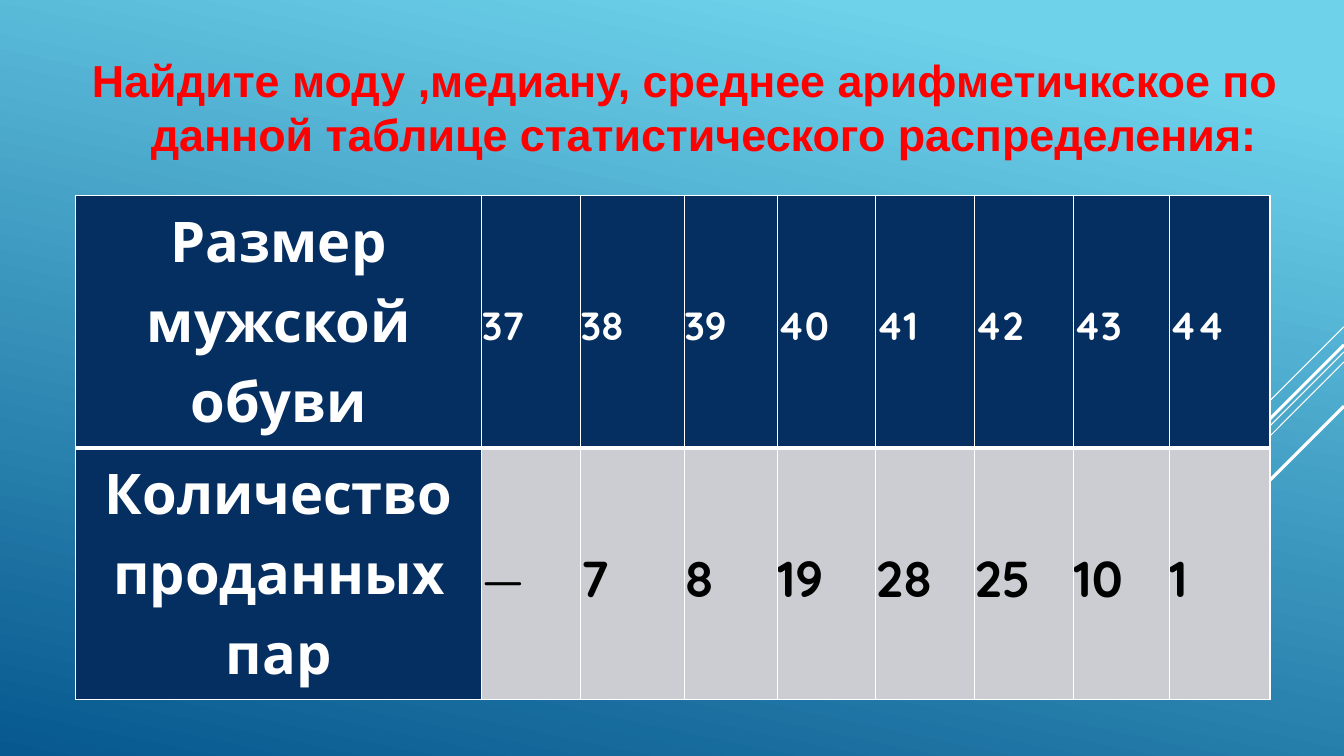
from dataclasses import dataclass

from lxml import etree
from pptx import Presentation
from pptx import util as u
from pptx.dml.color import RGBColor
from pptx.enum import shapes, text
from pptx.oxml.ns import qn

COLUMNS, ROWS = 160, 90  # square grid units over the whole slide


@dataclass(frozen=True)
class Theme:
    sky: str = "6ED2EB"
    deep: str = "06588E"
    white: str = "FFFFFF"
    black: str = "000000"
    red: str = "FF0000"
    navy: str = "052F61"
    grey: str = "CCCDD2"
    title_font: str = "Arial"
    table_font: str = "Quicksand"
    title_size: int = 32
    label_size: int = 40
    shoe_size: int = 28
    count_size: int = 36
    thin: float = 0.75
    thick: float = 2.25
    border: int = 1
    header_rule: int = 3


THEME = Theme()

# right-end row, reach to the lower left, line width
RAYS = [
    (38.9, 12, THEME.thin),
    (41.9, 39.1, THEME.thin),
    (43.1, 24.8, THEME.thin),
    (41.05, 22.9, THEME.thick),
    (48.35, 16.7, THEME.thick),
]
COLUMN_SPANS = [48.36, 11.76, 12.36, 11.04, 11.76, 11.76, 11.76, 11.4, 12]
ROW_SPAN = 30
SHOE_SIZES = ["Размер мужской обуви"] + [str(n) for n in range(37, 45)]
PAIRS_SOLD = ["Количество проданных пар", "—", "7", "8", "19", "28", "25", "10", "1"]


def grid(*spans):
    """Turn grid units into slide lengths."""
    return [u.Inches(span / 12) for span in spans]


def rgb(color):
    return RGBColor.from_string(color)


def add_run(p, content, font, size, color, bold=True):
    r = p.add_run()
    r.text = content
    r.font.name, r.font.size, r.font.bold = font, u.Pt(size), bold
    r.font.color.rgb = rgb(color)


def paint_background(s):
    fill = s.background.fill
    fill.gradient()
    fill.gradient_angle = 258
    for stop, color, position in zip(fill.gradient_stops, (THEME.sky, THEME.deep), (0.1, 1)):
        stop.color.rgb = rgb(color)
        stop.position = position


def add_ray(s, row, reach, width):
    """Draw a 45-degree line from the right edge down to the left."""
    ends = grid(COLUMNS, row, COLUMNS - reach, row + reach)
    ray = s.shapes.add_connector(shapes.MSO_CONNECTOR.STRAIGHT, *ends)
    ray.line.color.rgb = rgb(THEME.white)
    ray.line.width = u.Pt(width)
    etree.SubElement(ray._element.spPr, qn("a:effectLst"))


def set_title(s, content):
    sp = s.shapes.title
    sp.left, sp.top, sp.width, sp.height = grid(9.5, 5.64, 144.12, 14.16)
    tf = sp.text_frame
    tf.word_wrap = True
    tf.auto_size = text.MSO_AUTO_SIZE.NONE
    tf.vertical_anchor = text.MSO_ANCHOR.TOP
    p = tf.paragraphs[0]
    p.alignment = text.PP_ALIGN.CENTER
    indent = u.Inches(0.38)
    pPr = p._p.get_or_add_pPr()
    pPr.set("marL", str(indent))
    pPr.set("indent", str(-indent))
    add_run(p, content, THEME.title_font, THEME.title_size, THEME.red)


def set_borders(cell, bottom, top):
    tcPr = cell._tc.get_or_add_tcPr()
    widths = {"L": THEME.border, "R": THEME.border, "T": top, "B": bottom}
    for side, width in widths.items():
        ln = etree.SubElement(tcPr, qn(f"a:ln{side}"), w=str(u.Pt(width)))
        fill = etree.SubElement(ln, qn("a:solidFill"))
        etree.SubElement(fill, qn("a:srgbClr"), val=THEME.white)


def fill_cell(cell, content, size, color, fill, is_label):
    cell.margin_left = cell.margin_right = cell.margin_top = cell.margin_bottom = 0
    cell.fill.solid()
    cell.fill.fore_color.rgb = rgb(fill)
    p = cell.text_frame.paragraphs[0]
    p.line_spacing = 1.15
    if is_label:
        p.alignment = text.PP_ALIGN.CENTER
    else:
        cell.vertical_anchor = text.MSO_ANCHOR.MIDDLE
    add_run(p, content, THEME.table_font, size, color, bold=content != "—")


def add_sales_table(s):
    box = grid(9, 23.3, sum(COLUMN_SPANS), 2 * ROW_SPAN)
    table = s.shapes.add_table(2, len(COLUMN_SPANS), *box).table
    for column, width in zip(table.columns, grid(*COLUMN_SPANS)):
        column.width = width
    styles = [
        (SHOE_SIZES, THEME.shoe_size, THEME.white, THEME.navy),
        (PAIRS_SOLD, THEME.count_size, THEME.black, THEME.grey),
    ]
    for i, (values, size, color, fill) in enumerate(styles):
        table.rows[i].height = grid(ROW_SPAN)[0]
        for j, value in enumerate(values):
            cell = table.cell(i, j)
            if i == 0:
                set_borders(cell, bottom=THEME.header_rule, top=THEME.border)
            else:
                set_borders(cell, bottom=THEME.border, top=THEME.header_rule)
            if j == 0:
                fill_cell(cell, value, THEME.label_size, THEME.white, THEME.navy, True)
            else:
                fill_cell(cell, value, size, color, fill, False)


def main():
    prs = Presentation()
    prs.slide_width, prs.slide_height = grid(COLUMNS, ROWS)
    s = prs.slides.add_slide(prs.slide_layouts[5])
    paint_background(s)
    for ray in RAYS:
        add_ray(s, *ray)
    add_sales_table(s)
    set_title(s, "Найдите моду ,медиану, среднее арифметичкское по "
                 "данной таблице статистического распределения:")
    prs.save("out.pptx")


if __name__ == "__main__":
    main()
